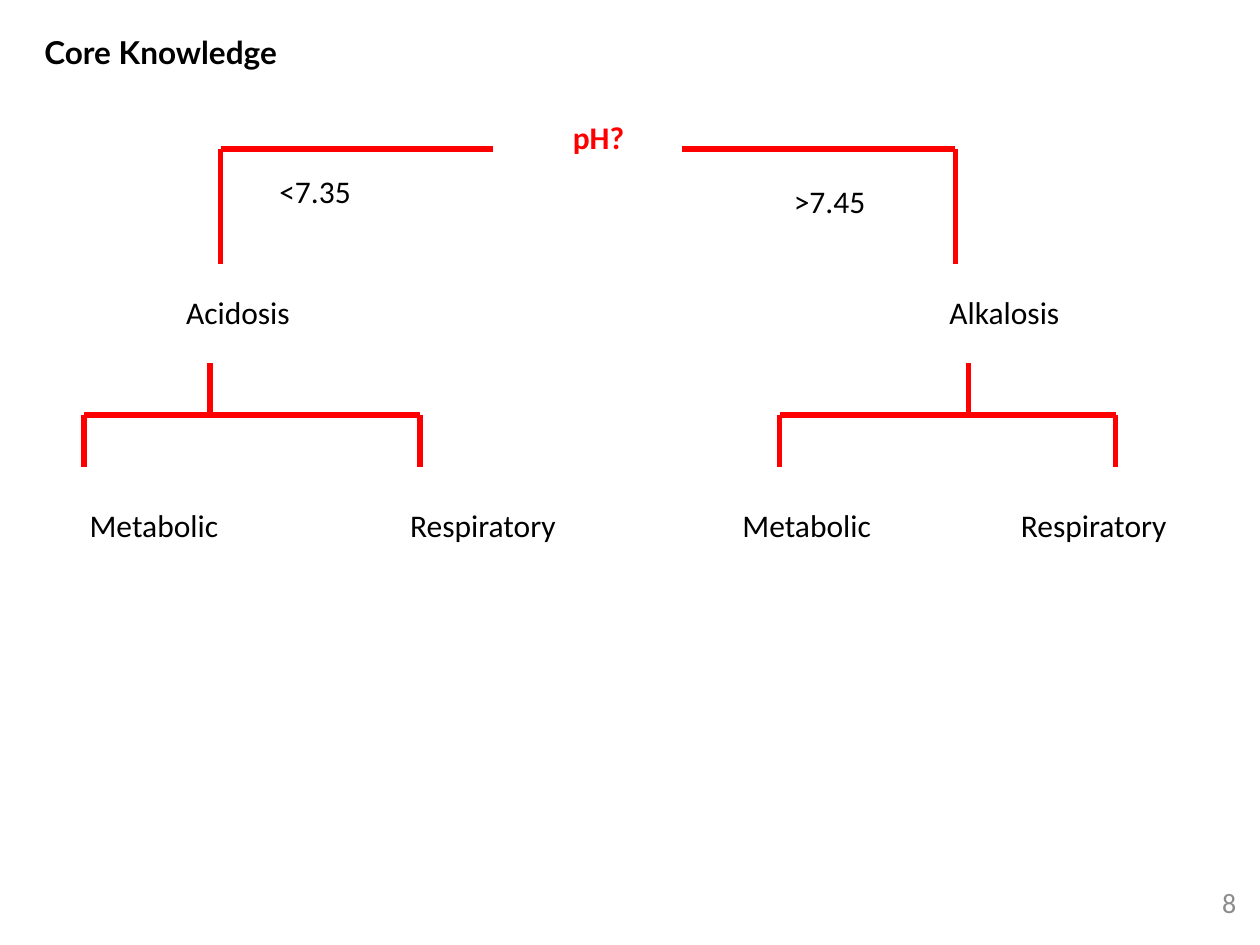
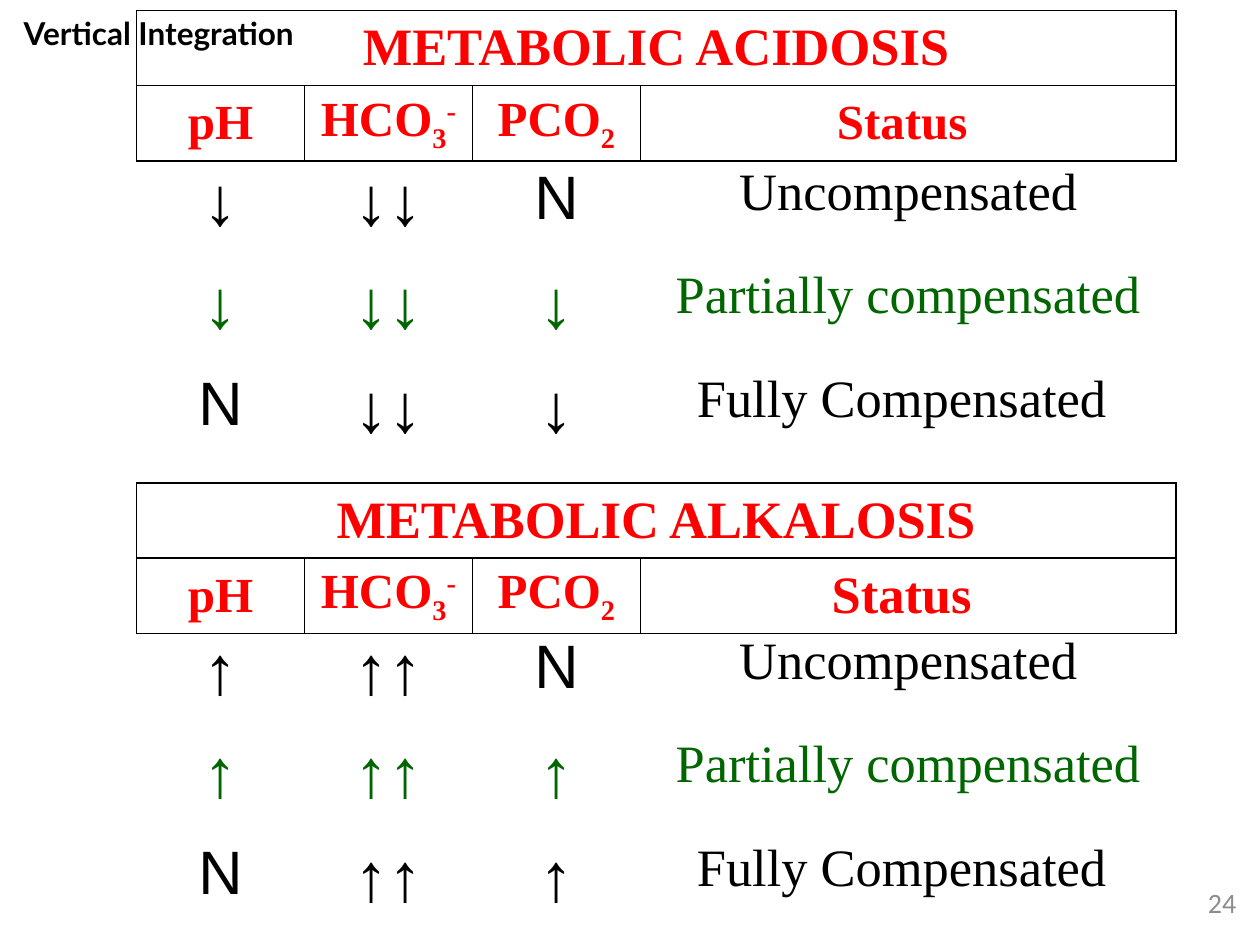
from pptx import Presentation
from pptx.dml.color import RGBColor
from pptx.enum.shapes import MSO_CONNECTOR
from pptx.enum.text import MSO_ANCHOR, MSO_AUTO_SIZE, PP_ALIGN
from pptx.oxml.ns import qn
from pptx.util import Pt
from lxml.etree import SubElement

BLACK = RGBColor(0x00, 0x00, 0x00)
WHITE = RGBColor(0xFF, 0xFF, 0xFF)
RED = RGBColor(0xFF, 0x00, 0x00)
GREEN = RGBColor(0x00, 0x66, 0x00)
GRAY = RGBColor(0x8C, 0x8C, 0x8C)

BODY_FONT = "Calibri"
TITLE_FONT = "Lato"
STATUS_FONT = "Times New Roman"
SYMBOL_FONT = "Arial"

TABLE_LEFT = 78
SYMBOL_WIDTHS = [96, 96, 96]
STATUS_WIDTH = 306
ROW_HEIGHT = 58.4
ROW_STEP = 59
HEADER_HEIGHT = 43


def format_run(run, size, color, font_name, bold=False):
    """Set the character format of one run."""
    run.font.size = Pt(size)
    run.font.color.rgb = color
    run.font.name = font_name
    run.font.bold = bold


def add_label(slide, text, left, top, width, height, size=18, color=BLACK,
              font_name=BODY_FONT, bold=False, alignment=PP_ALIGN.CENTER,
              anchor=MSO_ANCHOR.MIDDLE):
    """Add one line of unwrapped text and return its text frame."""
    box = slide.shapes.add_textbox(Pt(left), Pt(top), Pt(width), Pt(height))
    text_frame = box.text_frame
    text_frame.text = text
    text_frame.word_wrap = False
    text_frame.vertical_anchor = anchor
    paragraph = text_frame.paragraphs[0]
    paragraph.alignment = alignment
    format_run(paragraph.runs[0], size, color, font_name, bold)
    return text_frame


def add_title(slide, text, left, top, width):
    """Add the bold heading in the upper left corner."""
    text_frame = add_label(slide, text, left, top, width, 26.6,
                           font_name=TITLE_FONT, bold=True, anchor=MSO_ANCHOR.TOP)
    text_frame.auto_size = MSO_AUTO_SIZE.SHAPE_TO_FIT_TEXT
    text_frame.paragraphs[0].line_spacing = 0.9


def add_slide_number(slide, number):
    """Add the gray number in the lower right corner."""
    text_frame = add_label(slide, str(number), 670.3, 491.8, 43.2, 48, 16, GRAY,
                           alignment=PP_ALIGN.RIGHT)
    text_frame.word_wrap = True


def add_line(slide, start_x, start_y, end_x, end_y):
    """Add one red branch line without shadow."""
    line = slide.shapes.add_connector(MSO_CONNECTOR.STRAIGHT, Pt(start_x),
                                      Pt(start_y), Pt(end_x), Pt(end_y))
    line.line.color.rgb = RED
    line.line.width = Pt(3.25)
    SubElement(line._element.spPr, qn("a:effectLst"))


def add_fork(slide, left, stem, right):
    """Add a stem that splits into two branches."""
    top, middle, bottom = 207.5, 237, 267
    add_line(slide, stem, top, stem, middle)
    add_line(slide, left, middle, right, middle)
    for branch in (left, right):
        add_line(slide, branch, middle, branch, bottom)


def set_borders(cell, color):
    """Draw a one-point border on every side of a cell."""
    properties = cell._tc.get_or_add_tcPr()
    for side in ("a:lnL", "a:lnR", "a:lnT", "a:lnB"):
        border = SubElement(properties, qn(side), w=str(Pt(1)))
        fill = SubElement(border, qn("a:solidFill"))
        SubElement(fill, qn("a:srgbClr"), val=str(color))


def add_table(slide, left, top, widths, heights, border_color):
    """Add an unstyled table with plain borders."""
    frame = slide.shapes.add_table(len(heights), len(widths), Pt(left), Pt(top),
                                   Pt(sum(widths)), Pt(sum(heights)))
    table = frame.table
    table.first_row = table.horz_banding = False
    for column, width in zip(table.columns, widths):
        column.width = Pt(width)
    for row, height in zip(table.rows, heights):
        row.height = Pt(height)
    for cell in table.iter_cells():
        set_borders(cell, border_color)
        cell.fill.background()
    return table


def fill_cell(cell, parts, size, color, font_name, bold=False):
    """Write centred (text, baseline percent) parts into a cell."""
    paragraph = cell.text_frame.paragraphs[0]
    paragraph.alignment = PP_ALIGN.CENTER
    for text, baseline in parts:
        run = paragraph.add_run()
        run.text = text
        format_run(run, size, color, font_name, bold)
        if baseline:
            run._r.get_or_add_rPr().set("baseline", str(baseline * 1000))


def add_finding(slide, top, symbols, status, color):
    """Add one row of three symbols with its status beside it."""
    symbol_table = add_table(slide, TABLE_LEFT, top, SYMBOL_WIDTHS, [ROW_HEIGHT], WHITE)
    for cell, symbol in zip(symbol_table.iter_cells(), symbols):
        is_arrow = symbol != "N"
        fill_cell(cell, [(symbol, 0)], 39 if is_arrow else 35, color,
                  SYMBOL_FONT, is_arrow)
    status_table = add_table(slide, TABLE_LEFT + sum(SYMBOL_WIDTHS), top,
                             [STATUS_WIDTH], [ROW_HEIGHT], WHITE)
    fill_cell(status_table.cell(0, 0), [(status, 0)], 30, color, STATUS_FONT)


def add_header(slide, top, disorder, status_size):
    """Add the framed disorder name with its column headings."""
    table = add_table(slide, TABLE_LEFT, top, SYMBOL_WIDTHS + [STATUS_WIDTH],
                      [HEADER_HEIGHT] * 2, BLACK)
    table.cell(0, 0).merge(table.cell(0, 3))
    fill_cell(table.cell(0, 0), [(disorder, 0)], 30, RED, STATUS_FONT, True)
    headings = [
        ([("pH", 0)], 28),
        ([("HCO", 0), ("3", -25), ("-", 30)], 28),
        ([("PCO", 0), ("2", -25)], 28),
        ([("Status ", 0)], status_size),
    ]
    for column, (parts, size) in enumerate(headings):
        fill_cell(table.cell(1, column), parts, size, RED, STATUS_FONT, True)
    for cell in table.iter_cells():
        cell.vertical_anchor = MSO_ANCHOR.MIDDLE
        cell.fill.solid()
        cell.fill.fore_color.rgb = WHITE


def add_disorder(slide, header_top, rows_top, disorder, arrow, status_size):
    """Add the three compensation stages of one disorder and its header."""
    double = arrow * 2
    stages = [
        ((arrow, double, "N"), "Uncompensated", BLACK),
        ((arrow, double, arrow), "Partially compensated", GREEN),
        (("N", double, arrow), "Fully Compensated ", BLACK),
    ]
    for index, (symbols, status, color) in enumerate(stages):
        add_finding(slide, rows_top + index * ROW_STEP, symbols, status, color)
    add_header(slide, header_top, disorder, status_size)


def build_decision_tree(slide):
    """Build the pH decision tree."""
    add_label(slide, "pH?", 294, 48, 96, 60, color=RED, bold=True)
    for outer, inner in ((126, 282), (546, 390)):
        add_line(slide, outer, 85, inner, 85)
        add_line(slide, outer, 85, outer, 151)
    add_label(slide, "<7.35", 132, 79, 96, 60)
    add_label(slide, ">7.45", 426, 85, 96, 60)
    add_fork(slide, 48, 120, 240)
    add_fork(slide, 445.5, 553.5, 637.5)
    outcomes = [
        ("Acidosis ", 60, 151), ("Alkalosis ", 498, 151),
        ("Metabolic ", 12, 273), ("Respiratory", 198, 273),
        ("Metabolic ", 385, 273), ("Respiratory", 547, 273),
    ]
    for text, left, top in outcomes:
        add_label(slide, text, left, top, 156, 54)
    add_slide_number(slide, 8)
    add_title(slide, "Core Knowledge", 14.4, 18, 154.8)


def build_compensation(slide):
    """Build the compensation tables of both metabolic disorders."""
    add_disorder(slide, 6, 90, "METABOLIC ACIDOSIS", "↓", 28)
    add_disorder(slide, 276, 358, "METABOLIC ALKALOSIS", "↑", 30)
    add_slide_number(slide, 24)
    add_title(slide, "Vertical Integration", 0.7, 7.2, 180)


def main():
    """Build and save the presentation."""
    presentation = Presentation()
    presentation.slide_width = Pt(720)
    presentation.slide_height = Pt(540)
    blank_layout = presentation.slide_layouts[6]
    for build in (build_decision_tree, build_compensation):
        build(presentation.slides.add_slide(blank_layout))
    presentation.save("out.pptx")


if __name__ == "__main__":
    main()
